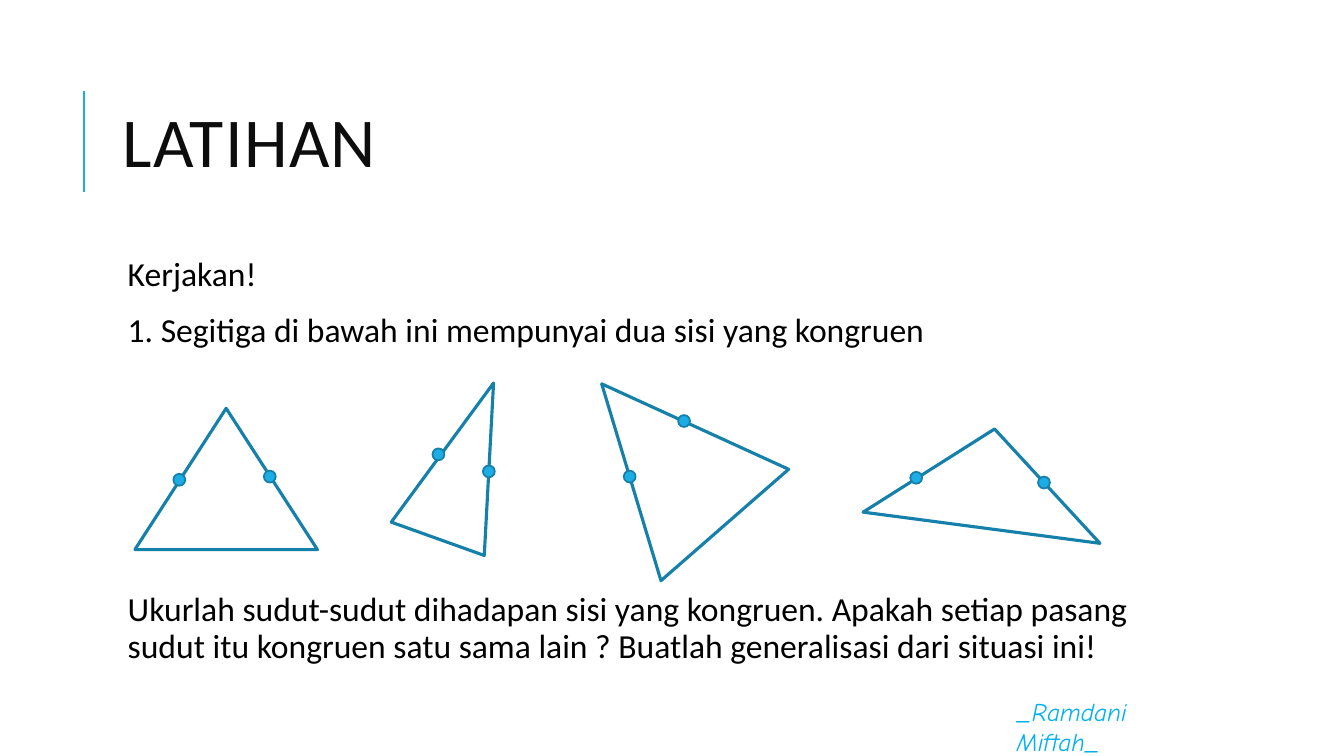
from lxml import etree
from pptx import Presentation
from pptx import util as u
from pptx.dml.color import RGBColor
from pptx.enum import shapes, text
from pptx.oxml.ns import qn

COLORS = {
    "accent": "1CADE4",
    "outline": "1580A9",
    "title": "0D0D0D",
    "body": "000000",
    "footer": "00B0F0",
}
DOT = 0.3
TRIANGLES = [
    ((3.4, 10.29, 4.6, 3.56), 0, [(0.97, 1.65), (3.25, 1.57)]),
    ((10.49, 9.53, 2.49, 4.17), 19.7, [(0.41, 1.77), (1.68, 2.2)]),
    ((14.58, 9.09, 4.27, 4.72), 318.9, [(1.14, 2.77), (2.51, 1.37)]),
    ((21.89, 10.8, 6.02, 2.51), 7.5, [(1.05, 1.09), (4.27, 1.21)]),
]
BODY = [
    ("Kerjakan!", 12),
    ("1. Segitiga di bawah ini mempunyai dua sisi yang kongruen", 12),
    ("Ukurlah sudut-sudut dihadapan sisi yang kongruen. Apakah setiap pasang "
     "sudut itu kongruen satu sama lain ? Buatlah generalisasi dari situasi ini!", 172),
]


def rgb(name):
    return RGBColor.from_string(COLORS[name])


def cm(*values):
    return [u.Cm(v) for v in values]


def add_text(s, box, paragraphs, size, color, font="Calibri",
             anchor=text.MSO_ANCHOR.MIDDLE):
    tf = s.shapes.add_textbox(*cm(*box)).text_frame
    tf.word_wrap = True
    tf.vertical_anchor = anchor
    tf.text = "\n".join(paragraphs)
    for p in tf.paragraphs:
        for r in p.runs:
            r.font.size = u.Pt(size)
            r.font.name = font
            r.font.color.rgb = rgb(color)
    return tf


def add_title(s, box):
    left, top, width, height = box
    x = left - 0.73
    rule = s.shapes.add_connector(shapes.MSO_CONNECTOR.STRAIGHT,
                                  *cm(x, top + 3.2, x, top + 0.66))
    rule.line.color.rgb = rgb("accent")
    rule.line.width = u.Pt(1.5)
    etree.SubElement(rule._element.spPr, qn("a:effectLst"))

    p = add_text(s, box, ["LATIHAN"], 50, "title").paragraphs[0]
    p.line_spacing = 0.8
    p.runs[0].font._element.set("spc", "100")


def add_body(s, box):
    tf = add_text(s, box, [line for line, _ in BODY], 24, "body",
                  anchor=text.MSO_ANCHOR.TOP)
    tf.margin_left = tf.margin_right = u.Cm(0.13)
    tf.margin_top = tf.margin_bottom = u.Cm(0.13)
    for p, (_, before) in zip(tf.paragraphs, BODY):
        p.line_spacing = 0.9
        p.space_before = u.Pt(before)
        p.space_after = u.Pt(2)
        p._p.get_or_add_pPr().set("marL", str(u.Cm(0.25)))


def add_outlined(group, kind, box, width):
    sp = group.shapes.add_shape(kind, *cm(*box))
    sp.shadow.inherit = False
    sp.line.color.rgb = rgb("outline")
    sp.line.width = u.Pt(width)
    return sp


def add_triangle(s, box, rotation, dots):
    group = s.shapes.add_group_shape()
    sp = add_outlined(group, shapes.MSO_SHAPE.ISOSCELES_TRIANGLE, box, 2.25)
    sp.fill.background()
    sp.rotation = rotation
    for dx, dy in dots:
        sp = add_outlined(group, shapes.MSO_SHAPE.OVAL,
                          (box[0] + dx, box[1] + dy, DOT, DOT), 1.25)
        sp.fill.solid()
        sp.fill.fore_color.rgb = rgb("accent")


def add_footer(s, box):
    tf = add_text(s, box, ["_Ramdani Miftah_"], 18, "footer", "Comic Neue")
    tf.paragraphs[0].runs[0].font.italic = True


def main():
    prs = Presentation()
    prs.slide_width, prs.slide_height = cm(33.87, 19.05)
    s = prs.slides.add_slide(prs.slide_layouts[6])
    add_footer(s, (25.37, 17.86, 4.83, 0.89))
    add_title(s, (2.84, 1.63, 27, 4.17))
    add_body(s, (2.84, 6.35, 27, 11.18))
    for box, rotation, dots in TRIANGLES:
        add_triangle(s, box, rotation, dots)
    prs.save("out.pptx")


if __name__ == "__main__":
    main()
